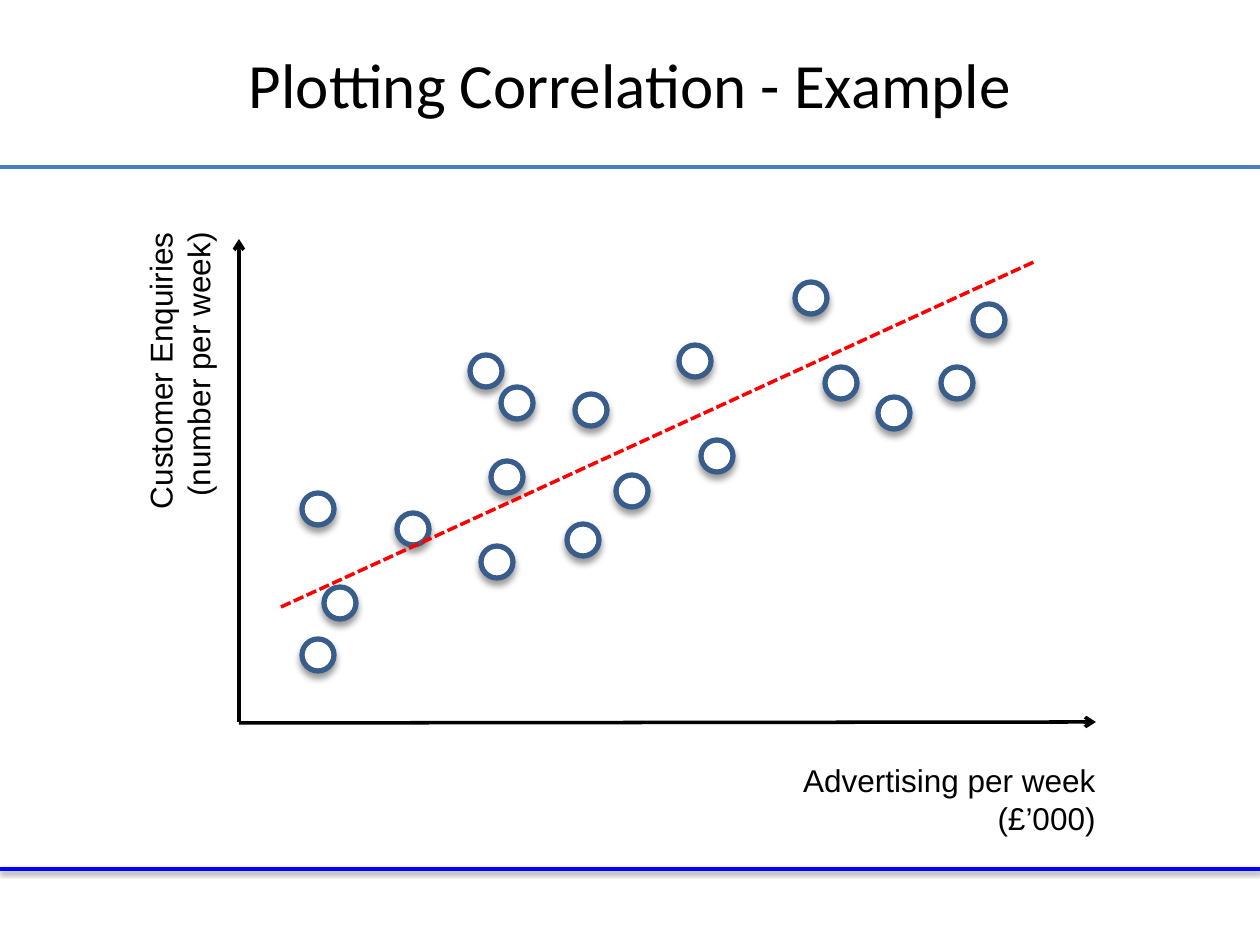
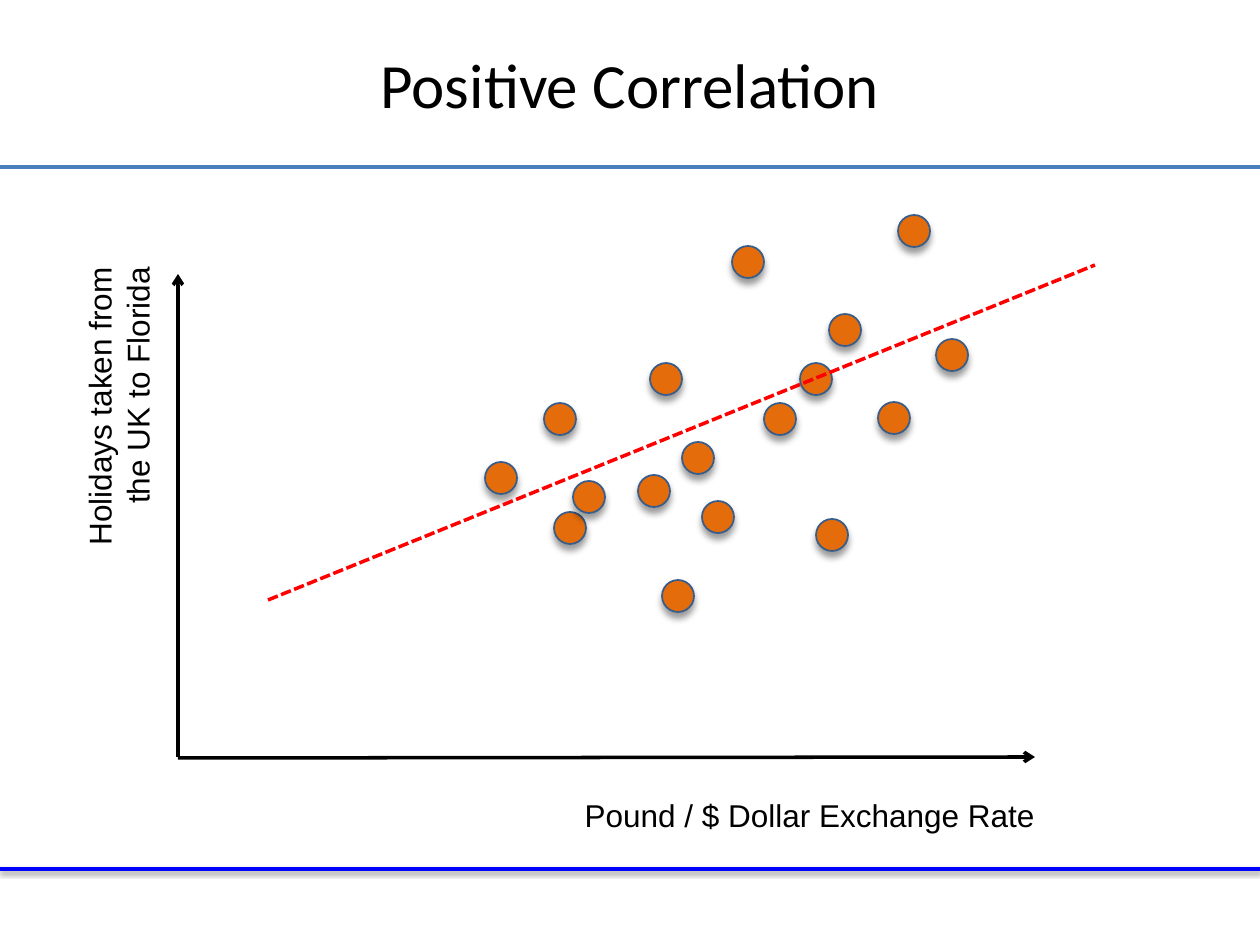
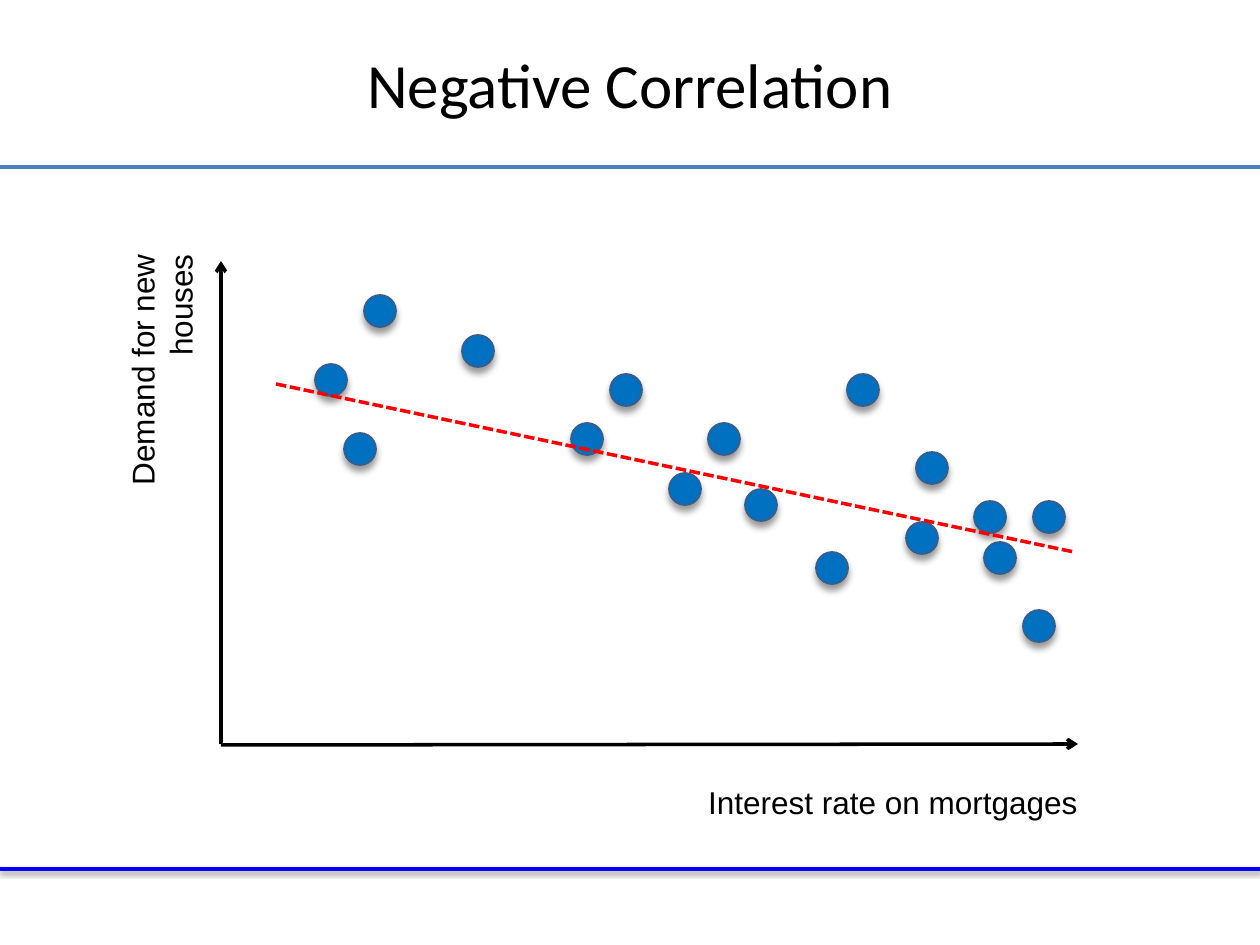
from pptx import Presentation
from pptx.dml.color import RGBColor
from pptx.enum.dml import MSO_LINE
from pptx.enum.shapes import MSO_CONNECTOR as CON, MSO_SHAPE as SHAPE
from pptx.enum.text import MSO_ANCHOR as ANCHOR, PP_ALIGN as ALIGN
from pptx.oxml import parse_xml
from pptx.oxml.ns import nsdecls
from pptx.util import Pt

PX = 914400 / 126
WIDE, HIGH = 1260, 945
DOT = 32            # dot diameter
UP, ACROSS = 483, 857  # axis lengths

BLACK = RGBColor(0x00, 0x00, 0x00)
WHITE = RGBColor(0xFF, 0xFF, 0xFF)
RED = RGBColor(0xFF, 0x00, 0x00)
BLUE = RGBColor(0x00, 0x00, 0xFF)
STEEL = RGBColor(0x4B, 0x7E, 0xBC)
NAVY = RGBColor(0x38, 0x5D, 0x8A)
ORANGE = RGBColor(0xE4, 0x6C, 0x0A)
AZURE = RGBColor(0x00, 0x70, 0xC0)

# One entry per slide: title, axis labels, x label size, origin,
# dot fill and outline, trend line ends, top left corners of the dots
PLOTS = [
    dict(title="Plotting Correlation - Example",
         ylab="Customer Enquiries\n(number per week)",
         xlab="Advertising per week (£’000)", xsize=(377, 94),
         zero=(239, 722), fill=WHITE, edge=3, trend=(281, 607, 1036, 261),
         dots=[(324, 587), (397, 513), (825, 367), (616, 475), (679, 345),
               (701, 440), (575, 394), (470, 355), (795, 282), (491, 461),
               (481, 546), (567, 524), (941, 367), (501, 387), (878, 397),
               (973, 304), (302, 493), (302, 639)]),
    dict(title="Positive Correlation",
         ylab="Holidays taken from the UK to Florida",
         xlab="Pound / $ Dollar Exchange Rate", xsize=(564, 50),
         zero=(178, 757), fill=ORANGE, edge=1, trend=(268, 600, 1095, 265),
         dots=[(936, 339), (829, 314), (898, 215), (764, 403), (554, 512),
               (650, 363), (638, 475), (544, 403), (732, 246), (485, 462),
               (682, 442), (702, 501), (878, 402), (573, 481), (816, 519),
               (662, 580), (800, 363)]),
    dict(title="Negative Correlation",
         ylab="Demand for new houses",
         xlab="Interest rate on mortgages", xsize=(490, 50),
         zero=(221, 744), fill=AZURE, edge=1, trend=(276, 384, 1074, 552),
         dots=[(984, 542), (1023, 610), (974, 501), (816, 552), (344, 433),
               (610, 374), (571, 423), (462, 335), (906, 522), (315, 364),
               (708, 423), (745, 489), (1033, 501), (364, 295), (916, 452),
               (669, 473), (847, 374)]),
]


def shade(shape, alpha=0, blur=0, dist=0):
    """Give a shape a soft black shadow below it, or none at all."""
    drop = (f'<a:outerShdw blurRad="{Pt(blur)}" dist="{Pt(dist)}" '
            'dir="5400000" rotWithShape="0"><a:srgbClr val="000000">'
            f'<a:alpha val="{alpha * 1000}"/></a:srgbClr></a:outerShdw>')
    shape._element.spPr.append(parse_xml(
        f'<a:effectLst {nsdecls("a")}>{drop if alpha else ""}</a:effectLst>'))


def rule(slide, ends, color, width=2, arrow=False):
    """Draw a straight line between two points."""
    line = slide.shapes.add_connector(CON.STRAIGHT, *[round(v * PX) for v in ends])
    line.line.color.rgb = color
    line.line.width = Pt(width)
    if arrow:
        line.line._get_or_add_ln().append(
            parse_xml(f'<a:tailEnd {nsdecls("a")} type="arrow"/>'))
    return line


deck = Presentation()
deck.slide_width = round(WIDE * PX)
deck.slide_height = round(HIGH * PX)

for plot in PLOTS:
    slide = deck.slides.add_slide(deck.slide_layouts[6])
    x, y = plot["zero"]

    # Bands above the footer and below the title
    shade(rule(slide, (0, 869, WIDE, 869), BLUE), 38, 3.1, 1.6)
    shade(rule(slide, (0, 167, WIDE, 167), STEEL, 1.75))

    # Axes
    for ends in [(x, y, x, y - UP), (x, y + 1, x + ACROSS, y)]:
        shade(rule(slide, ends, BLACK, arrow=True))

    # Title and axis labels
    wide, high = plot["xsize"]
    texts = [
        (plot["title"], (63, 10, 1134, 147), 0, "Calibri", 36, ALIGN.CENTER, ANCHOR.MIDDLE),
        (plot["ylab"], (x - 232, y - 374, 346, 90), 270, "Arial", 18, ALIGN.RIGHT, ANCHOR.TOP),
        (plot["xlab"], (x + ACROSS + 12 - wide, y + 33, wide, high), 0,
         "Arial", 18, ALIGN.RIGHT, ANCHOR.TOP),
    ]
    for words, area, turn, face, size, align, anchor in texts:
        box = slide.shapes.add_textbox(*[round(v * PX) for v in area])
        box.rotation = turn
        frame = box.text_frame
        frame.word_wrap = True
        frame.vertical_anchor = anchor
        for i, part in enumerate(words.split("\n")):
            para = frame.add_paragraph() if i else frame.paragraphs[0]
            para.alignment = align
            run = para.add_run()
            run.text = part
            run.font.name = face
            run.font.size = Pt(size)
            run.font.color.rgb = BLACK

    # Dots
    for left, top in plot["dots"]:
        dot = slide.shapes.add_shape(
            SHAPE.OVAL, *[round(v * PX) for v in (left, top, DOT, DOT)])
        dot.fill.solid()
        dot.fill.fore_color.rgb = plot["fill"]
        dot.line.color.rgb = NAVY
        dot.line.width = Pt(plot["edge"])
        shade(dot, 40, 4, 3)

    # Trend line
    trend = rule(slide, plot["trend"], RED)
    trend.line.dash_style = MSO_LINE.SQUARE_DOT
    shade(trend)

deck.save("out.pptx")
